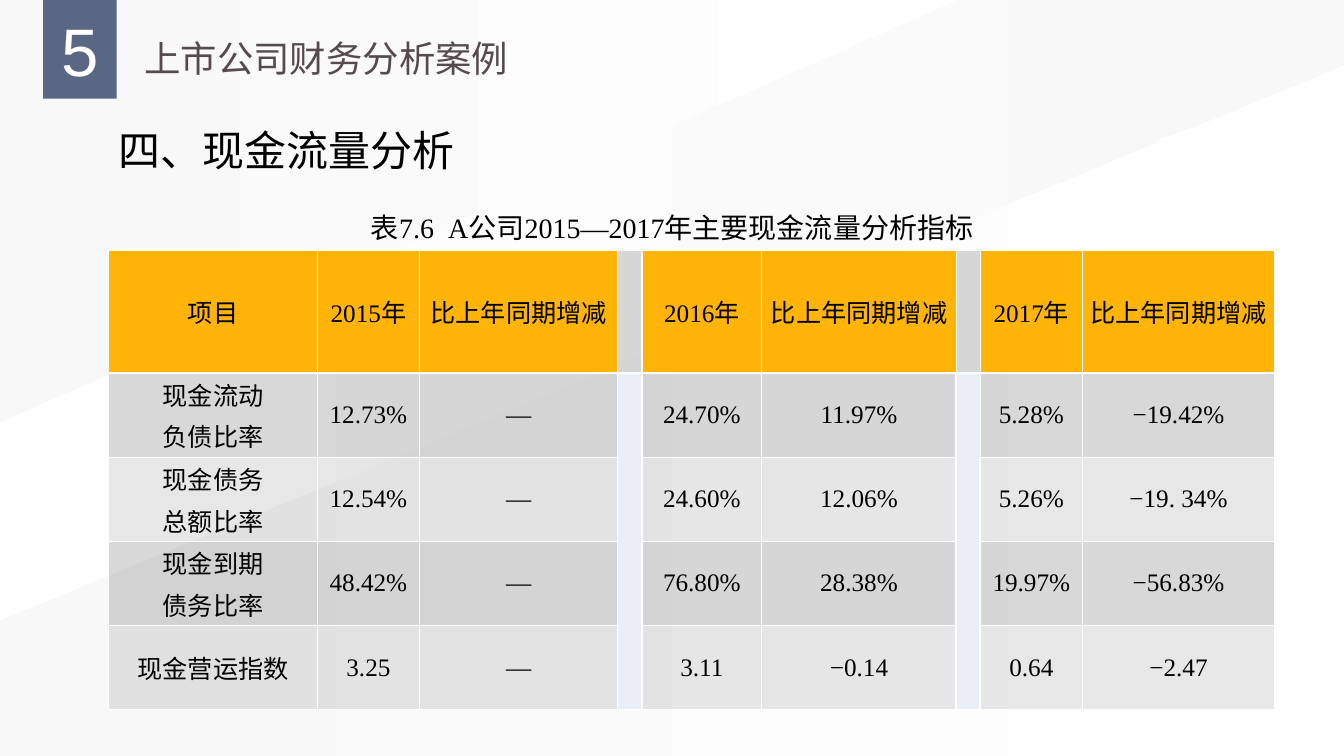
from dataclasses import dataclass
from typing import Optional

from lxml.etree import SubElement
from pptx import Presentation
from pptx.dml.color import RGBColor
from pptx.enum.shapes import MSO_SHAPE
from pptx.enum.text import MSO_ANCHOR, MSO_AUTO_SIZE, PP_ALIGN
from pptx.oxml.ns import qn
from pptx.util import Cm, Pt


@dataclass(frozen=True)
class Theme:
    """Colours, fonts and type sizes of the slide."""
    white: str = "FFFFFF"
    pale: str = "F8F8F8"
    slate: str = "596784"
    brown: str = "554B4F"
    black: str = "000000"
    gold: str = "FFB407"
    grey: str = "646464"
    mist: str = "EAEFF7"
    serif: str = "Times New Roman"
    sans: str = "Arial"
    hei: str = "Noto Sans CJK SC"
    badge: int = 48
    topic: int = 30
    head: int = 26
    note: int = 20
    body: int = 18


@dataclass(frozen=True)
class Panel:
    """A backdrop outline in centimetres with its gradient ends."""
    points: tuple[tuple[float, float], ...]
    start: str
    end: str


@dataclass(frozen=True)
class Label:
    """A text box with its place in centimetres and its look."""
    words: str
    box: tuple[float, float, float, float]
    size: int
    font: str
    tint: str
    align: PP_ALIGN
    anchor: MSO_ANCHOR = MSO_ANCHOR.TOP
    inset: Optional[float] = None
    after: float = 0


THEME = Theme()
WIDE, HIGH = 33.87, 19.05
PANELS = (
    Panel(((0, 0), (WIDE, 0), (WIDE, HIGH), (0, HIGH)), THEME.pale, THEME.white),
    Panel(((0, 0), (24.13, 0), (0, 10.64)), THEME.white, THEME.pale),
    Panel(((0, 15.65), (WIDE, 1.65), (WIDE, HIGH), (0, HIGH)), THEME.white, THEME.pale),
    Panel(((29.11, 3.56), (WIDE, 1.8), (WIDE, 3.56)), THEME.white, THEME.white),
)
LABELS = (
    Label("5", (1.09, 0.23, 1.85, 2.06), THEME.badge, THEME.sans, THEME.white,
          PP_ALIGN.CENTER, inset=0),
    Label("表7.6  A公司2015—2017年主要现金流量分析指标", (2.74, 5.18, 28.4, 1.12),
          THEME.note, THEME.serif, THEME.black, PP_ALIGN.CENTER, MSO_ANCHOR.MIDDLE),
    Label("四、现金流量分析", (2.74, 3.02, 10.24, 1.55), THEME.topic, THEME.hei,
          THEME.black, PP_ALIGN.JUSTIFY, after=6),
)
COLS = (5.26, 2.57, 5, 0.1, 3.02, 4.9, 0.1, 2.57, 4.85)
ROWS = (3.1, 2.12, 2.12, 2.12, 2.12)
GAPS = (3, 6)
RISE = "比上年同期增减"
CELLS = (
    ("项目", "2015年", RISE, "", "2016年", RISE, "", "2017年", RISE),
    ("现金流动\n负债比率", "12.73%", "—", "", "24.70%", "11.97%", "", "5.28%", "−19.42%"),
    ("现金债务\n总额比率", "12.54%", "—", "", "24.60%", "12.06%", "", "5.26%", "−19. 34%"),
    ("现金到期\n债务比率", "48.42%", "—", "", "76.80%", "28.38%", "", "19.97%", "−56.83%"),
    ("现金营运指数", "3.25", "—", "", "3.11", "−0.14", "", "0.64", "−2.47"),
)


def add_run(para, words: str, size: int, font: str, tint: str) -> None:
    """Add one styled run to a paragraph."""
    run = para.add_run()
    run.text = words
    run.font.size = Pt(size)
    run.font.name = font
    run.font.color.rgb = RGBColor.from_string(tint)
    SubElement(run.font._element, qn("a:ea"), typeface=THEME.hei)


def draw_panel(slide, panel: Panel) -> None:
    """Draw one backdrop outline."""
    first, *rest = [(Cm(x), Cm(y)) for x, y in panel.points]
    pen = slide.shapes.build_freeform(*first)
    pen.add_line_segments(rest, close=True)
    shape = pen.convert_to_shape()
    shape.shadow.inherit = False
    shape.line.fill.background()
    shape.fill.gradient()
    shape.fill.gradient_angle = 180
    for stop, tint in zip(shape.fill.gradient_stops, (panel.start, panel.end)):
        stop.color.rgb = RGBColor.from_string(tint)


def draw_title(slide) -> None:
    """Place the title above the backdrop and format it."""
    title = slide.shapes.title
    title._element.getparent().append(title._element)
    title.left, title.top, title.width, title.height = map(Cm, (3.38, 0.46, 9.78, 1.57))
    frame = title.text_frame
    frame.word_wrap = False
    frame.auto_size = MSO_AUTO_SIZE.SHAPE_TO_FIT_TEXT
    frame.vertical_anchor = MSO_ANCHOR.TOP
    para = frame.paragraphs[0]
    para.alignment = PP_ALIGN.LEFT
    para.line_spacing = 1.3
    para.space_before = Pt(0)
    add_run(para, "上市公司财务分析案例", THEME.head, THEME.hei, THEME.brown)


def draw_badge(slide) -> None:
    """Draw the block behind the chapter number."""
    block = slide.shapes.add_shape(MSO_SHAPE.RECTANGLE, Cm(1.09), 0, Cm(1.85), Cm(2.49))
    block.shadow.inherit = False
    block.fill.solid()
    block.fill.fore_color.rgb = RGBColor.from_string(THEME.slate)
    block.line.fill.background()


def draw_label(slide, label: Label) -> None:
    """Draw one text box."""
    frame = slide.shapes.add_textbox(*map(Cm, label.box)).text_frame
    frame.word_wrap = True
    frame.auto_size = MSO_AUTO_SIZE.SHAPE_TO_FIT_TEXT
    frame.vertical_anchor = label.anchor
    if label.inset is not None:
        frame.margin_left = frame.margin_right = Cm(label.inset)
        frame.margin_top = frame.margin_bottom = Cm(label.inset)
    para = frame.paragraphs[0]
    para.alignment = label.align
    para.space_after = Pt(label.after)
    add_run(para, label.words, label.size, label.font, label.tint)


def paint_cell(cell, tint: str, alpha: int, edges: dict[str, float]) -> None:
    """Give a cell its borders and fill, with alpha in percent."""
    props = cell._tc.get_or_add_tcPr()
    for side, width in edges.items():
        line = SubElement(props, qn(f"a:ln{side}"), w=str(Pt(width)))
        SubElement(SubElement(line, qn("a:solidFill")), qn("a:srgbClr"), val=THEME.white)
    cell.fill.solid()
    cell.fill.fore_color.rgb = RGBColor.from_string(tint)
    if alpha < 100:
        colour = props.find(qn("a:solidFill"))[0]
        SubElement(colour, qn("a:alpha"), val=str(alpha * 1000))


def fill_cell(cell, words: str, row: int, col: int) -> None:
    """Write and colour one cell by its row and column."""
    if col in GAPS:
        tint, alpha = (THEME.mist, 100) if row else (THEME.grey, 25)
    else:
        tint, alpha = (THEME.grey, 25 if row % 2 else 15) if row else (THEME.gold, 100)
    edges = {
        "L": 1.5 if row > 1 and col - 1 in GAPS else 1,
        "R": 1.5 if row and col in (5, 8) else 1,
        "T": 2.25 if row == 1 and col not in GAPS else 1,
        "B": 2.25 if row == 0 and col not in GAPS else 1,
    }
    paint_cell(cell, tint, alpha, edges)
    if not words:
        return
    cell.vertical_anchor = MSO_ANCHOR.MIDDLE
    if col - 1 not in GAPS:
        cell.margin_left = cell.margin_right = Cm(0.18)
    if row and col == 0:
        cell.margin_top = cell.margin_bottom = 0
    frame = cell.text_frame
    for index, part in enumerate(words.split("\n")):
        para = frame.add_paragraph() if index else frame.paragraphs[0]
        para.alignment = PP_ALIGN.CENTER
        para.space_before = para.space_after = Pt(1.8 if row else 1.6)
        font = THEME.hei if row and col == 0 else THEME.serif
        add_run(para, part, THEME.body, font, THEME.black)


def draw_table(slide) -> None:
    """Draw the table of cash flow ratios."""
    table = slide.shapes.add_table(len(ROWS), len(COLS), Cm(2.74), Cm(6.3),
                                   Cm(sum(COLS)), Cm(sum(ROWS))).table
    table.first_row = table.horz_banding = False
    for column, width in zip(table.columns, COLS):
        column.width = Cm(width)
    for line, height in zip(table.rows, ROWS):
        line.height = Cm(height)
    for row, texts in enumerate(CELLS):
        for col, words in enumerate(texts):
            fill_cell(table.cell(row, col), words, row, col)
    for col in GAPS:
        table.cell(1, col).merge(table.cell(len(ROWS) - 1, col))


def main() -> None:
    """Build the slide and save it."""
    deck = Presentation()
    deck.slide_width, deck.slide_height = Cm(WIDE), Cm(HIGH)
    slide = deck.slides.add_slide(deck.slide_layouts[5])
    for panel in PANELS:
        draw_panel(slide, panel)
    draw_title(slide)
    draw_badge(slide)
    draw_table(slide)
    for label in LABELS:
        draw_label(slide, label)
    deck.save("out.pptx")


if __name__ == "__main__":
    main()
